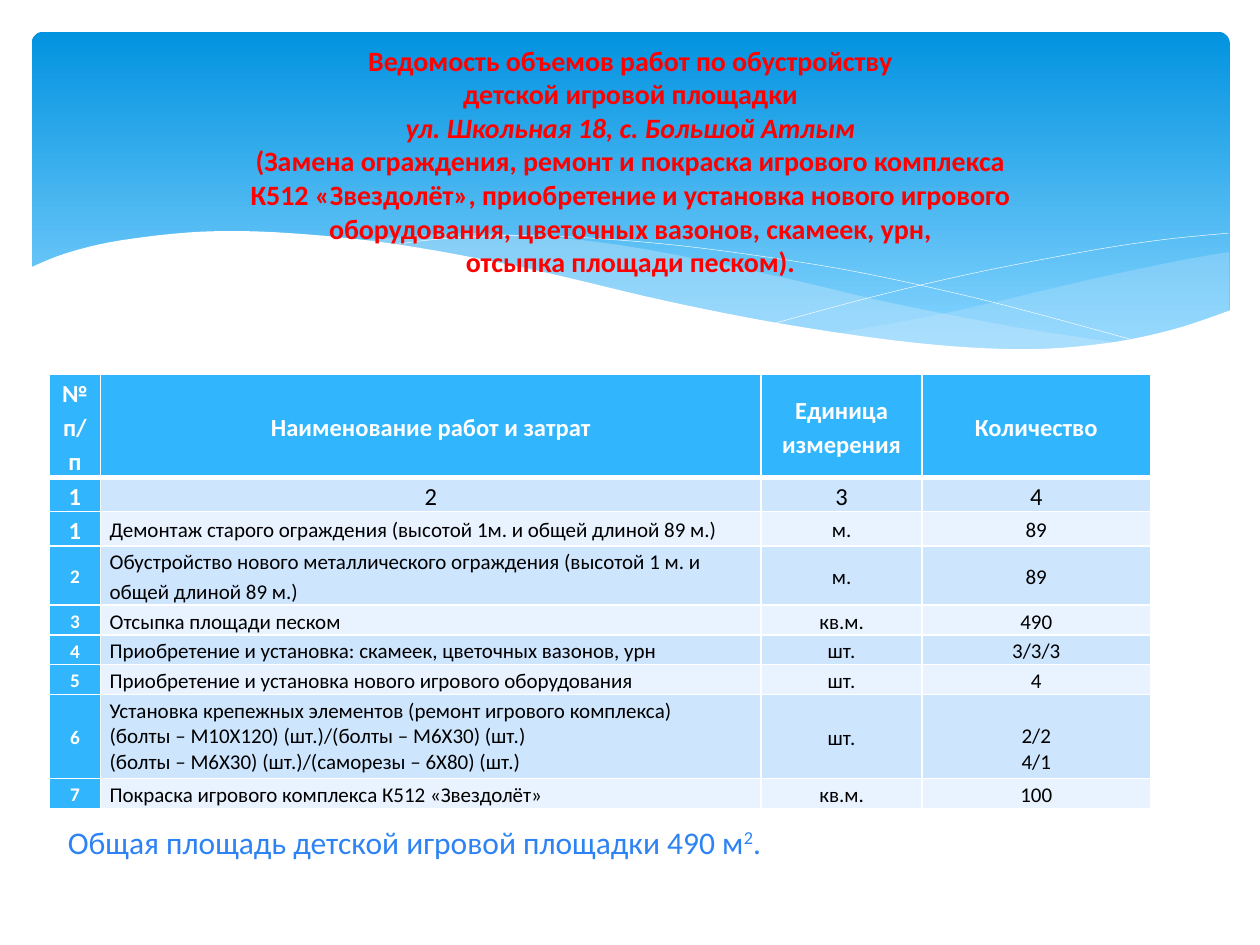
from dataclasses import dataclass

from lxml.etree import SubElement
from pptx import Presentation
from pptx.dml.color import RGBColor
from pptx.enum.shapes import MSO_SHAPE
from pptx.enum.text import MSO_ANCHOR, MSO_AUTO_SIZE, PP_ALIGN
from pptx.oxml.ns import qn
from pptx.util import Cm, Pt


@dataclass(frozen=True)
class Theme:
    font: str = "Calibri"
    white: str = "FFFFFF"
    black: str = "000000"
    title: str = "FF0000"
    note: str = "2D83F4"
    sky_top: str = "0293E0"
    sky_bottom: str = "83D3FE"
    swell: str = "C6E7FC"
    accent: str = "31B6FD"
    band_dark: str = "CEE5FE"
    band_light: str = "E8F3FF"
    title_size: float = 16
    note_size: float = 18
    header_size: float = 14
    body_size: float = 12
    number_size: float = 11


THEME = Theme()

PLAY_SET = "К512 «Звездолёт»"
TITLE_LINES = [
    "Ведомость объемов работ по обустройству",
    "детской игровой площадки",
    "ул. Школьная 18, с. Большой Атлым",
    "(Замена ограждения, ремонт и покраска игрового комплекса",
    f"{PLAY_SET}, приобретение и установка нового игрового",
    "оборудования, цветочных вазонов, скамеек, урн,",
    "отсыпка площади песком).",
]
ADDRESS_LINE = 2
NOTE_RUNS = ["Общая площадь детской игровой площадки 490 м", "2", "."]

WORKS = [
    ("№ п/п", "Наименование работ и затрат", "Единица измерения", "Количество"),
    ("1", "2", "3", "4"),
    ("1", "Демонтаж старого ограждения (высотой 1м. и общей длиной 89 м.)", "м.", "89"),
    ("2", "Обустройство нового металлического ограждения (высотой 1 м. и общей длиной 89 м.)",
     "м.", "89"),
    ("3", "Отсыпка площади песком", "кв.м.", "490"),
    ("4", "Приобретение и установка: скамеек, цветочных вазонов, урн", "шт.", "3/3/3"),
    ("5", "Приобретение и установка нового игрового оборудования", "шт.", "4"),
    ("6", "Установка крепежных элементов (ремонт игрового комплекса)\n"
          "(болты – М10Х120) (шт.)/(болты – М6Х30) (шт.)\n"
          "(болты – М6Х30) (шт.)/(саморезы – 6Х80) (шт.)", "шт.", "2/2\n4/1"),
    ("7", f"Покраска игрового комплекса {PLAY_SET}", "кв.м.", "100"),
]
# All places and sizes below are in centimetres.
COLUMN_WIDTHS = [1.04, 13.31, 3.25, 4.6]
ROW_HEIGHTS = [2.05, 0.69, 0.69, 1.19, 0.6, 0.6, 0.6, 1.7, 0.6]

RIGHT_SWELL = [
    [(24.78, 5.08), (23.75, 5.26), (21.87, 5.66), (19.13, 6.3), (16.79, 6.73)],
    [(16.79, 6.73), (18.26, 6.91), (19.84, 7.04), (21.21, 7.04), (22.58, 6.91),
     (23.75, 6.65), (24.78, 6.27)],
]
LONG_SWELL = [
    [(22.68, 6.93), (20.5, 6.6), (17.93, 6.1), (15.98, 5.64), (13.74, 5.16),
     (11.81, 4.85), (9.65, 4.7), (8.33, 4.75), (7.26, 4.85)],
    [(7.26, 4.85), (9.19, 5.16), (11.4, 5.64), (14.38, 6.3), (16.51, 6.71),
     (18.34, 6.96), (20.22, 7.06), (21.54, 7.04), (22.68, 6.93)],
]
FALLING_LINE = [(7.85, 4.95), (8.74, 4.83), (10.19, 4.75), (11.91, 4.8), (14.12, 5),
                (16.89, 5.41), (19.3, 5.92), (21.11, 6.38), (23.04, 6.91)]
RISING_LINE = [(15.57, 6.53), (17.65, 5.97), (19.71, 5.49), (22, 5.05),
               (23.47, 4.83), (24.77, 4.7)]
FRONT_WAVE = [
    [(24.82, 6.25), (23.62, 6.65), (22.22, 6.93), (20.55, 7.04), (18.44, 6.91),
     (15.9, 6.55), (13.44, 6.07), (10.62, 5.41), (8.03, 4.93), (5.84, 4.7),
     (4.09, 4.67), (2.41, 4.85), (1.32, 5.11), (0.58, 5.41)],
    [(0.58, 5.41), (0.58, 8.36)],
    [(0.58, 8.36), (24.82, 8.36)],
]


def color(value):
    return RGBColor.from_string(value)


def place(shape, left, top, width, height):
    shape.left, shape.top, shape.width, shape.height = map(Cm, (left, top, width, height))


def style(paragraph, size, ink, bold=False, align=PP_ALIGN.CENTER):
    paragraph.alignment = align
    for run in paragraph.runs:
        run.font.name, run.font.size, run.font.bold = THEME.font, Pt(size), bold
        run.font.color.rgb = color(ink)


def smooth(knots, steps=6):
    """Points of a Catmull-Rom curve through the knots."""
    padded = [knots[0], *knots, knots[-1]]
    points = [knots[0]]
    for a, b, c, d in zip(padded, padded[1:], padded[2:], padded[3:]):
        for step in range(1, steps + 1):
            t = step / steps
            points.append(tuple(
                (2 * q + (r - p) * t + (2 * p - 5 * q + 4 * r - s) * t ** 2
                 + (3 * q - p - 3 * r + s) * t ** 3) / 2
                for p, q, r, s in zip(a, b, c, d)))
    return points


def add_outline(slide, edges, closed):
    points = [(Cm(x), Cm(y)) for edge in edges for x, y in smooth(edge)]
    builder = slide.shapes.build_freeform(*points[0], scale=1.0)
    builder.add_line_segments(points[1:], close=closed)
    shape = builder.convert_to_shape()
    shape.shadow.inherit = False
    return shape


def add_wave(slide, edges, fill, opacity=100):
    wave = add_outline(slide, edges, closed=True)
    wave.fill.solid()
    wave.fill.fore_color.rgb = color(fill)
    wave.line.fill.background()
    if opacity < 100:
        fill_color = wave.element.spPr.find(".//" + qn("a:srgbClr"))
        SubElement(fill_color, qn("a:alpha")).set("val", str(opacity * 1000))


def add_backdrop(slide):
    sky = slide.shapes.add_shape(MSO_SHAPE.ROUNDED_RECTANGLE,
                                 Cm(0.64), Cm(0.64), Cm(24.15), Cm(6.86))
    sky.adjustments[0] = 0.034
    sky.shadow.inherit = False
    sky.line.fill.background()
    sky.fill.gradient()
    sky.fill.gradient_angle = 270
    stops = ((0, THEME.sky_top), (0.9, THEME.sky_bottom))
    for stop, (position, value) in zip(sky.fill.gradient_stops, stops):
        stop.position, stop.color.rgb = position, color(value)
    add_wave(slide, RIGHT_SWELL, THEME.swell, 29)
    add_wave(slide, LONG_SWELL, THEME.swell, 40)
    for knots in (FALLING_LINE, RISING_LINE):
        curve = add_outline(slide, [knots], closed=False)
        curve.fill.background()
        curve.line.color.rgb = color(THEME.white)
        curve.line.width = Pt(0.25)
    add_wave(slide, FRONT_WAVE, THEME.white)


def add_title(slide):
    title = slide.shapes.title
    slide.shapes.element.append(title.element)  # in front of the backdrop
    place(title, 0.71, 0.74, 24, 5)
    frame = title.text_frame
    frame.text = "\v".join(TITLE_LINES)
    frame.auto_size = MSO_AUTO_SIZE.NONE
    frame.vertical_anchor = MSO_ANCHOR.MIDDLE
    style(frame.paragraphs[0], THEME.title_size, THEME.title, bold=True)
    frame.paragraphs[0].runs[ADDRESS_LINE].font.italic = True


def set_borders(cell, row):
    top, bottom = (3 if row == 1 else 1), (3 if row == 0 else 1)
    for side, width in (("L", 1), ("R", 1), ("T", top), ("B", bottom)):
        border = SubElement(cell._tc.get_or_add_tcPr(), qn(f"a:ln{side}"), w=str(Pt(width)))
        fill = SubElement(border, qn("a:solidFill"))
        SubElement(fill, qn("a:srgbClr"), val=THEME.white)


def fill_cell(cell, row, column, text):
    accent = row == 0 or column == 0
    band = THEME.band_dark if row % 2 else THEME.band_light
    if row < 2 or (row == 2 and column == 0):
        size = THEME.header_size
    else:
        size = THEME.number_size if column == 0 else THEME.body_size
    set_borders(cell, row)
    cell.fill.solid()
    cell.fill.fore_color.rgb = color(THEME.accent if accent else band)
    cell.vertical_anchor = MSO_ANCHOR.MIDDLE
    cell.margin_left = cell.margin_right = Cm(0.18)
    cell.margin_top = cell.margin_bottom = 0
    cell.text_frame.text = text
    several = "\n" in text
    if several and column == 3:
        cell.margin_top = Cm(0.51)  # level with the bolt lines
    align = PP_ALIGN.LEFT if row > 1 and column == 1 else PP_ALIGN.CENTER
    for paragraph in cell.text_frame.paragraphs:
        paragraph.line_spacing = 1.0 if several else 1.15
        style(paragraph, size, THEME.white if accent else THEME.black, accent, align)


def add_works_table(slide):
    table = slide.shapes.add_table(len(WORKS), len(COLUMN_WIDTHS), Cm(0.99), Cm(7.55),
                                   Cm(sum(COLUMN_WIDTHS)), Cm(sum(ROW_HEIGHTS))).table
    for column, width in zip(table.columns, COLUMN_WIDTHS):
        column.width = Cm(width)
    for row, (height, texts) in enumerate(zip(ROW_HEIGHTS, WORKS)):
        table.rows[row].height = Cm(height)
        for column, text in enumerate(texts):
            fill_cell(table.cell(row, column), row, column, text)


def add_area_note(slide):
    frame = slide.shapes.add_textbox(Cm(0.99), Cm(15.67), Cm(23.8), Cm(1.8)).text_frame
    frame.word_wrap = True
    frame.vertical_anchor = MSO_ANCHOR.BOTTOM
    frame.margin_left = Cm(0.38)
    paragraph = frame.paragraphs[0]
    for text in NOTE_RUNS:
        paragraph.add_run().text = text
    style(paragraph, THEME.note_size, THEME.note, align=PP_ALIGN.LEFT)
    paragraph.runs[1]._r.get_or_add_rPr().set("baseline", "30000")


def main():
    presentation = Presentation()
    presentation.slide_width, presentation.slide_height = Cm(25.4), Cm(19.05)
    slide = presentation.slides.add_slide(presentation.slide_layouts[5])
    add_backdrop(slide)
    add_title(slide)
    add_works_table(slide)
    add_area_note(slide)
    presentation.save("out.pptx")


if __name__ == "__main__":
    main()
